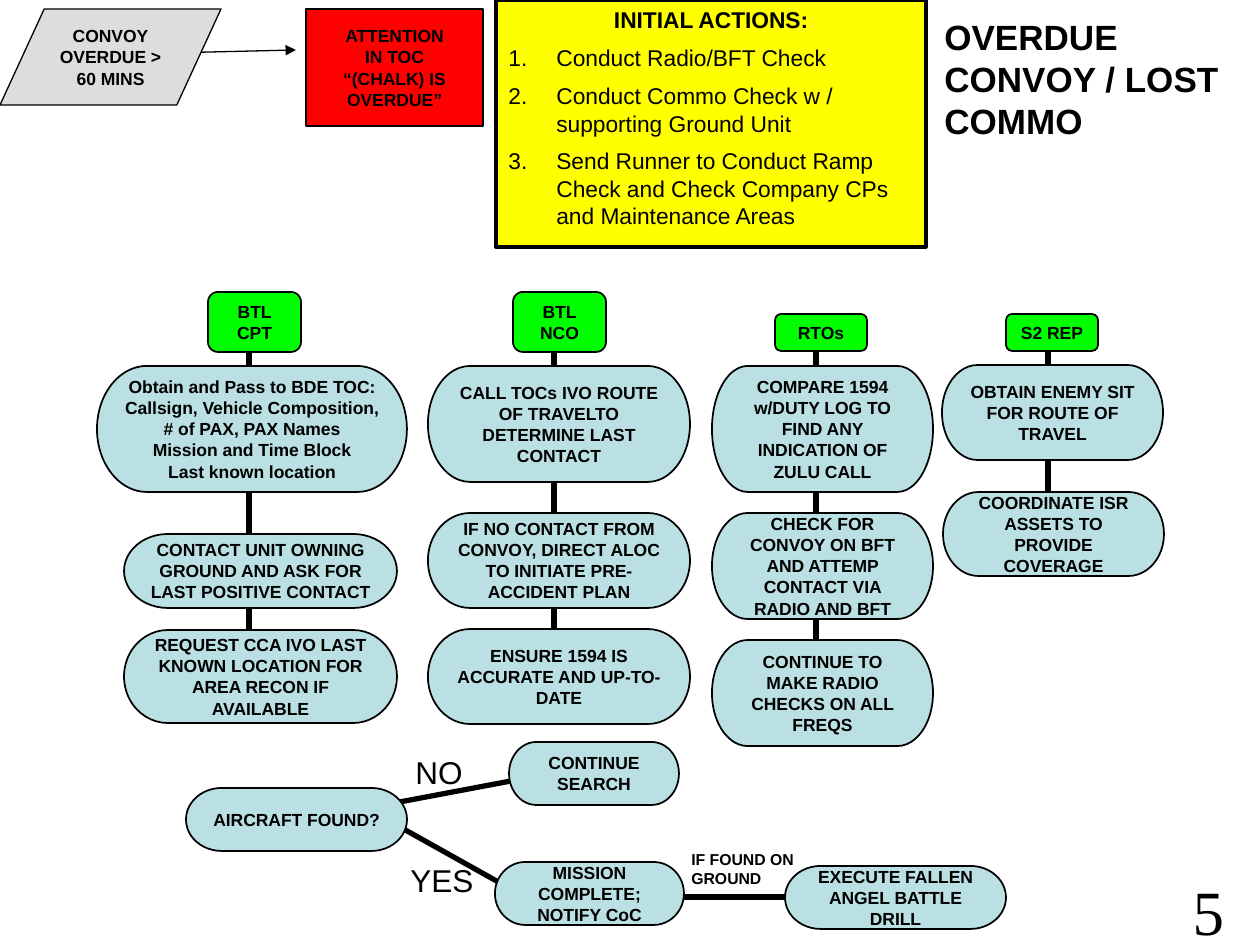
"""Build the overdue convoy / lost commo battle drill slide."""
from lxml import etree
from pptx import Presentation
from pptx.dml.color import RGBColor
from pptx.enum import shapes, text
from pptx.oxml import ns
from pptx.util import Emu, Pt

SCALE = 914400 / 126
BLACK = RGBColor(0x00, 0x00, 0x00)
RED = RGBColor(0xFF, 0x00, 0x00)
YELLOW = RGBColor(0xFF, 0xFF, 0x00)
GREEN = RGBColor(0x00, 0xFF, 0x00)
GRAY = RGBColor(0xDD, 0xDD, 0xDD)
BLUE = RGBColor(0xBB, 0xE0, 0xE3)

KIND = shapes.MSO_SHAPE
MIDDLE = text.MSO_ANCHOR.MIDDLE
TOP = text.MSO_ANCHOR.TOP
CENTER = text.PP_ALIGN.CENTER
LEFT = text.PP_ALIGN.LEFT
BOLD = {"size": Pt(10), "name": "Arial", "bold": True}
ANSWER = {"size": Pt(18), "name": "Arial", "bold": False}

TITLE = "OVERDUE CONVOY / LOST COMMO"
TRIGGER = ["CONVOY", "OVERDUE > 60 MINS"]
ATTENTION = ["ATTENTION", "IN TOC", "“(CHALK) IS OVERDUE”"]
INITIAL_HEADING = "INITIAL ACTIONS:"
INITIAL_ACTIONS = [
    "Conduct Radio/BFT Check",
    "Conduct Commo Check w / supporting Ground Unit",
    "Send Runner to Conduct Ramp Check and Check Company CPs and Maintenance Areas",
]

ROLES = [
    {"role": "BTL CPT", "head": (208, 292, 93, 60), "axis": 249, "steps": [
        ((97, 366, 310, 126), ["Obtain and Pass to BDE TOC:",
                               "Callsign, Vehicle Composition, # of PAX, PAX Names",
                               "Mission and Time Block", "Last known location"]),
        ((124, 534, 273, 74), ["CONTACT UNIT OWNING GROUND AND ASK FOR LAST POSITIVE CONTACT"]),
        ((124, 630, 273, 93), ["REQUEST CCA IVO LAST KNOWN LOCATION FOR AREA RECON IF AVAILABLE"]),
    ]},
    {"role": "BTL NCO", "head": (513, 292, 93, 60), "axis": 554, "steps": [
        ((428, 366, 262, 116), ["CALL TOCs IVO ROUTE OF TRAVELTO DETERMINE LAST CONTACT"]),
        ((428, 513, 262, 95), ["IF NO CONTACT FROM CONVOY, DIRECT ALOC TO INITIATE PRE-ACCIDENT PLAN"]),
        ((428, 629, 262, 95), ["ENSURE 1594 IS ACCURATE AND UP-TO-DATE"]),
    ]},
    {"role": "RTOs", "head": (775, 314, 92, 37), "axis": 816, "steps": [
        ((712, 366, 221, 126), ["COMPARE 1594 w/DUTY LOG TO FIND ANY INDICATION OF ZULU CALL"]),
        ((712, 513, 221, 106), ["CHECK FOR CONVOY ON BFT AND ATTEMP CONTACT VIA RADIO AND BFT"]),
        ((712, 640, 221, 106), ["CONTINUE TO MAKE RADIO CHECKS ON ALL FREQS"]),
    ]},
    {"role": "S2 REP", "head": (1006, 314, 92, 37), "axis": 1048, "steps": [
        ((942, 365, 221, 95), ["OBTAIN ENEMY SIT FOR ROUTE OF TRAVEL"]),
        ((943, 492, 221, 84), ["COORDINATE ISR ASSETS TO PROVIDE COVERAGE"]),
    ]},
]

OUTCOMES = [
    ((186, 788, 221, 63), ["AIRCRAFT FOUND?"]),
    ((509, 742, 170, 63), ["CONTINUE SEARCH"]),
    ((495, 862, 189, 63), ["MISSION COMPLETE; NOTIFY CoC"]),
    ((785, 866, 221, 63), ["EXECUTE FALLEN ANGEL BATTLE DRILL"]),
]
BRANCHES = [(389, 804, 564, 771), (375, 813, 543, 907), (648, 897, 816, 897)]
LABELS = [
    ((403, 747, 95, 50), "NO", ANSWER),
    ((398, 855, 95, 50), "YES", ANSWER),
    ((679, 844, 136, 50), "IF FOUND ON GROUND", {**BOLD, "size": Pt(9)}),
    ((932, 9, 315, 149), TITLE, {**BOLD, "size": Pt(20)}),
]
PAGE = ((1157, 866, 103, 79), "5", {"size": Pt(36), "name": "Times New Roman"})


def px(length):
    return Emu(round(length * SCALE))


def style(target, values):
    for key, value in values.items():
        setattr(target, key, value)


def write(frame, lines, font, align=CENTER, anchor=MIDDLE):
    style(frame, {"word_wrap": True, "vertical_anchor": anchor})
    for index, line in enumerate(lines):
        paragraph = frame.add_paragraph() if index else frame.paragraphs[0]
        paragraph.alignment = align
        run = paragraph.add_run()
        run.text = line
        style(run.font, font)
        run.font.color.rgb = BLACK


def add_box(slide, kind, place, fill, lines, font=BOLD, width=1, anchor=MIDDLE):
    box = slide.shapes.add_shape(kind, *map(px, place))
    box.shadow.inherit = False
    box.fill.solid()
    box.fill.fore_color.rgb = fill
    box.line.color.rgb = BLACK
    box.line.width = Pt(width)
    write(box.text_frame, lines, font, anchor=anchor)
    return box


def add_step(slide, place, lines):
    step = add_box(slide, KIND.FLOWCHART_TERMINATOR, place, BLUE, lines)
    style(step.text_frame, {"margin_top": 0, "margin_bottom": 0})


def add_label(slide, place, label, font, align=LEFT):
    box = slide.shapes.add_textbox(*map(px, place))
    write(box.text_frame, [label], font, align, TOP)


def add_line(slide, ends, width=3, arrow=False):
    link = slide.shapes.add_connector(shapes.MSO_CONNECTOR.STRAIGHT, *map(px, ends))
    link.line.color.rgb = BLACK
    link.line.width = Pt(width)
    if arrow:
        etree.SubElement(link.line._get_or_add_ln(), ns.qn("a:tailEnd"), type="triangle")
    etree.SubElement(link._element.spPr, ns.qn("a:effectLst"))


def add_initial_actions(slide):
    box = add_box(slide, KIND.RECTANGLE, (496, 0, 430, 247), YELLOW,
                  [INITIAL_HEADING, *INITIAL_ACTIONS], {**BOLD, "size": Pt(13)}, 2, TOP)
    for paragraph in box.text_frame.paragraphs[1:]:
        style(paragraph, {"alignment": LEFT, "space_before": Pt(6)})
        paragraph.runs[0].font.bold = False
        properties = paragraph._p.get_or_add_pPr()
        properties.set("marL", str(px(48)))
        properties.set("indent", str(px(-48)))
        etree.SubElement(properties, ns.qn("a:buAutoNum"), type="arabicPeriod")


def main():
    deck = Presentation()
    style(deck, {"slide_width": px(1260), "slide_height": px(945)})
    slide = deck.slides.add_slide(deck.slide_layouts[6])

    for ends in BRANCHES:
        add_line(slide, ends)
    for column in ROLES:
        last_top = column["steps"][-1][0][1]
        add_line(slide, (column["axis"], 335, column["axis"], last_top + 20))
    add_line(slide, (168, 53, 296, 50), 0.75, True)

    add_box(slide, KIND.FLOWCHART_DATA, (0, 9, 221, 96), GRAY, TRIGGER, width=0.75)
    add_box(slide, KIND.FLOWCHART_PROCESS, (306, 9, 177, 117), RED, ATTENTION, width=0.75)
    add_initial_actions(slide)

    for column in ROLES:
        add_box(slide, KIND.FLOWCHART_ALTERNATE_PROCESS, column["head"], GREEN, [column["role"]])
        for place, lines in column["steps"]:
            add_step(slide, place, lines)
    for place, lines in OUTCOMES:
        add_step(slide, place, lines)
    for label in LABELS:
        add_label(slide, *label)
    add_label(slide, *PAGE, align=CENTER)
    deck.save("out.pptx")


if __name__ == "__main__":
    main()
